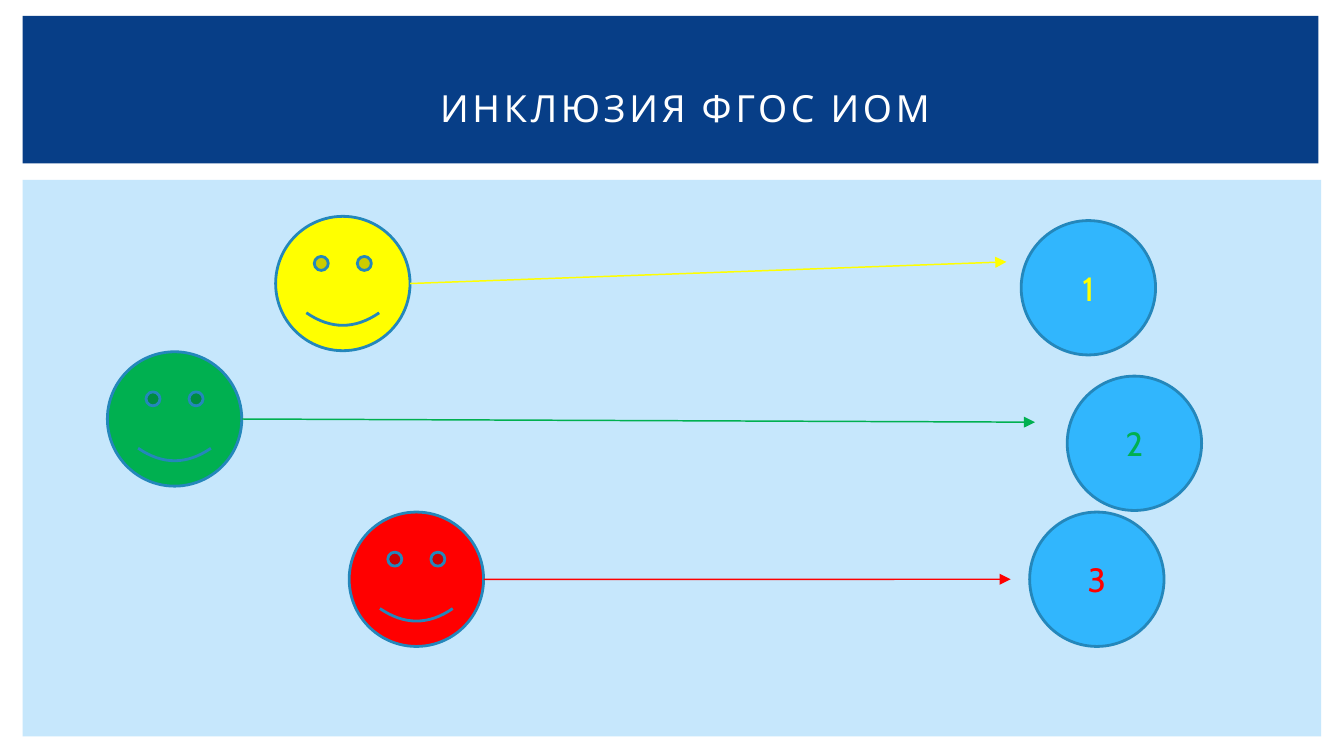
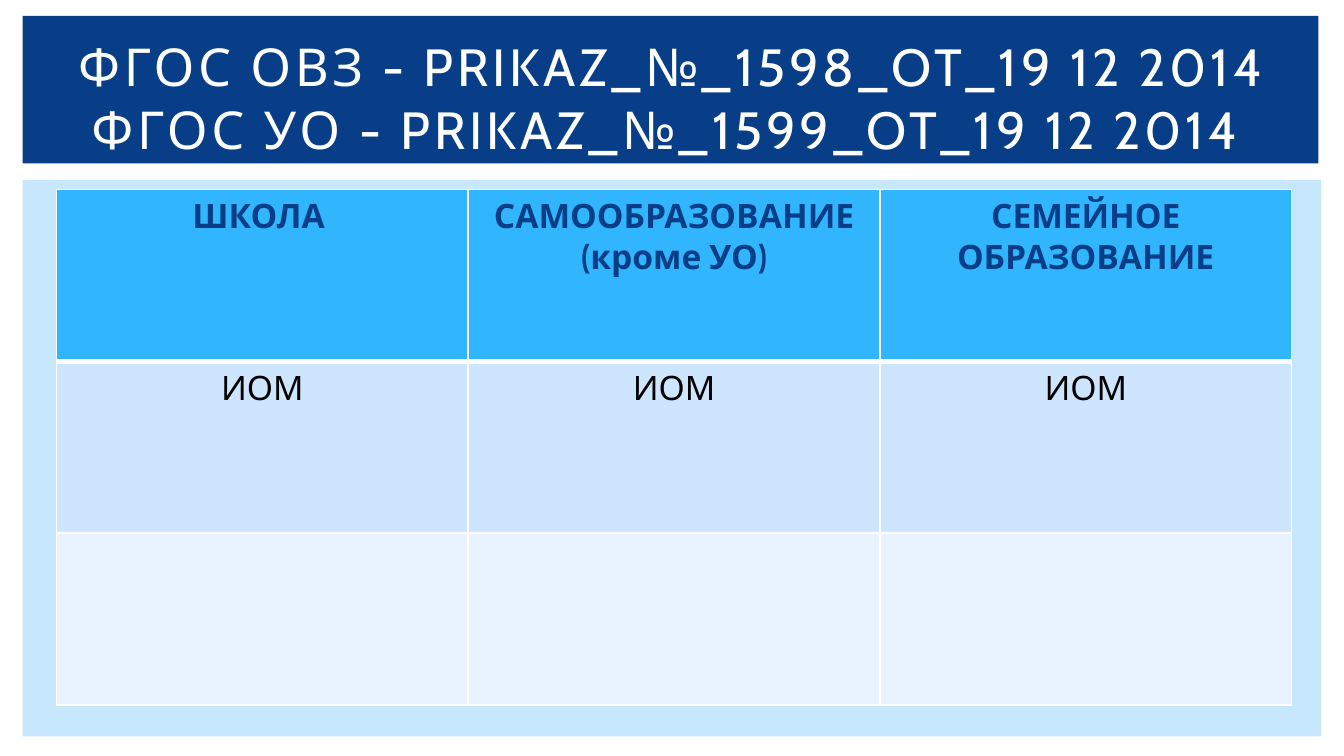
from lxml import etree
from pptx import Presentation
from pptx import util as u
from pptx.dml.color import RGBColor
from pptx.enum import shapes, text
from pptx.oxml.ns import qn

FONT = "Cabin"
WHITE, BLACK, NAVY, SKY = "FFFFFF", "000000", "073E87", "C6E7FC"
BLUE, OUTLINE = "31B6FD", "2487BB"
YELLOW, GREEN, RED = "FFFF00", "00B050", "FF0000"
ROW_FILLS = [BLUE, "CEE5FE", "E8F3FF"]
HEADER = (0.43, 0.3, 24.49, 2.79)
BODY = (0.43, 3.4, 24.54, 10.52)
DIAMETER = 2.54


def rgb(value):
    return RGBColor.from_string(value)


def place(box, x, y, w, h):
    return [u.Cm(v) for v in (box[0] + x, box[1] + y, w, h)]


def style_text(tf, size, color, bold=False, spacing=None):
    for p in tf.paragraphs:
        p.alignment = text.PP_ALIGN.CENTER
        for r in p.runs:
            r.font.name = FONT
            r.font.size = u.Pt(size)
            r.font.bold = bold
            r.font.color.rgb = rgb(color)
            if spacing:
                r._r.get_or_add_rPr().set("spc", str(spacing * 100))


def add_shape(s, kind, position, fill, line=None):
    sp = s.shapes.add_shape(kind, *position)
    sp.shadow.inherit = False
    sp.fill.solid()
    sp.fill.fore_color.rgb = rgb(fill)
    if line:
        sp.line.color.rgb = rgb(line)
        sp.line.width = u.Pt(1.5)
    else:
        sp.line.fill.background()
    return sp


def add_arrow(s, box, start, end, color):
    points = [u.Cm(box[i % 2] + v) for i, v in enumerate(start + end)]
    line = s.shapes.add_connector(shapes.MSO_CONNECTOR.STRAIGHT, *points)
    line.line.color.rgb = rgb(color)
    line.line.width = u.Pt(0.79)
    etree.SubElement(line.line._get_or_add_ln(), qn("a:tailEnd"), type="triangle")
    etree.SubElement(line.element.spPr, qn("a:effectLst"))


def add_base(prs, title, size, x, y):
    s = prs.slides.add_slide(prs.slide_layouts[5])
    s.background.fill.solid()
    s.background.fill.fore_color.rgb = rgb(WHITE)
    for box, fill in ((BODY, SKY), (HEADER, NAVY)):
        add_shape(s, shapes.MSO_SHAPE.RECTANGLE, place(box, 0, 0, *box[2:]), fill)
    sp = s.shapes.title
    s.shapes.element.append(sp.element)
    sp.left, sp.top, sp.width, sp.height = place(HEADER, x, y, 23.29, 2.18)
    tf = sp.text_frame
    tf.text = title
    tf.word_wrap = True
    tf.auto_size = text.MSO_AUTO_SIZE.NONE
    tf.vertical_anchor = text.MSO_ANCHOR.MIDDLE
    style_text(tf, size, WHITE, spacing=2)
    return s


def add_routes(s, box):
    routes = [
        (YELLOW, (4.78, 0.69), (18.59, 1.55), (18.87, 0.77)),
        (GREEN, (1.6, 3.25), (19.13, 4.58), (19.74, 3.71)),
        (RED, (6.17, 6.28), (18.67, 7.55), (19.03, 6.28)),
    ]
    size = (DIAMETER, DIAMETER)
    for color, face, _, _ in routes:
        add_shape(s, shapes.MSO_SHAPE.SMILEY_FACE, place(box, *face, *size), color, OUTLINE)
    for color, (x, y), tip, _ in routes:
        add_arrow(s, box, (x + DIAMETER, y + DIAMETER / 2), tip, color)
    for number, (color, _, _, goal) in enumerate(routes, 1):
        sp = add_shape(s, shapes.MSO_SHAPE.OVAL, place(box, *goal, *size), BLUE, OUTLINE)
        sp.text_frame.text = str(number)
        sp.text_frame.vertical_anchor = text.MSO_ANCHOR.MIDDLE
        style_text(sp.text_frame, 18, color)


def set_borders(cell, top, bottom):
    tcPr = cell._tc.get_or_add_tcPr()
    for side, width in (("L", 1), ("R", 1), ("T", top), ("B", bottom)):
        ln = etree.SubElement(tcPr, qn(f"a:ln{side}"), w=str(u.Pt(width)))
        fill = etree.SubElement(ln, qn("a:solidFill"))
        etree.SubElement(fill, qn("a:srgbClr"), val=WHITE)


def add_forms_table(s, box):
    rows = [
        ["ШКОЛА ", "САМООБРАЗОВАНИЕ (кроме УО)", "СЕМЕЙНОЕ ОБРАЗОВАНИЕ"],
        ["ИОМ"] * 3,
        [""] * 3,
    ]
    table = s.shapes.add_table(3, 3, *place(box, 0.64, 0.18, 23.34, 9.75)).table
    for i, row in enumerate(rows):
        for j, value in enumerate(row):
            cell = table.cell(i, j)
            set_borders(cell, 3 if i == 1 else 1, 3 if i == 0 else 1)
            cell.fill.solid()
            cell.fill.fore_color.rgb = rgb(ROW_FILLS[i])
            cell.text_frame.text = value
            style_text(cell.text_frame, 18, BLACK if i else NAVY, bold=i == 0)


def main():
    prs = Presentation()
    prs.slide_width, prs.slide_height = u.Cm(25.4), u.Cm(14.29)
    s = add_base(prs, "ИНКЛЮЗИЯ ФГОС ИОМ", 20, 0.87, 0.64)
    add_routes(s, BODY)
    orders = "ФГОС ОВЗ - PRIKAZ_№_1598_OT_19 12 2014\vФГОС УО - PRIKAZ_№_1599_OT_19 12 2014 "
    s = add_base(prs, orders, 28, 0.64, 0.44)
    add_forms_table(s, BODY)
    prs.save("out.pptx")


if __name__ == "__main__":
    main()
